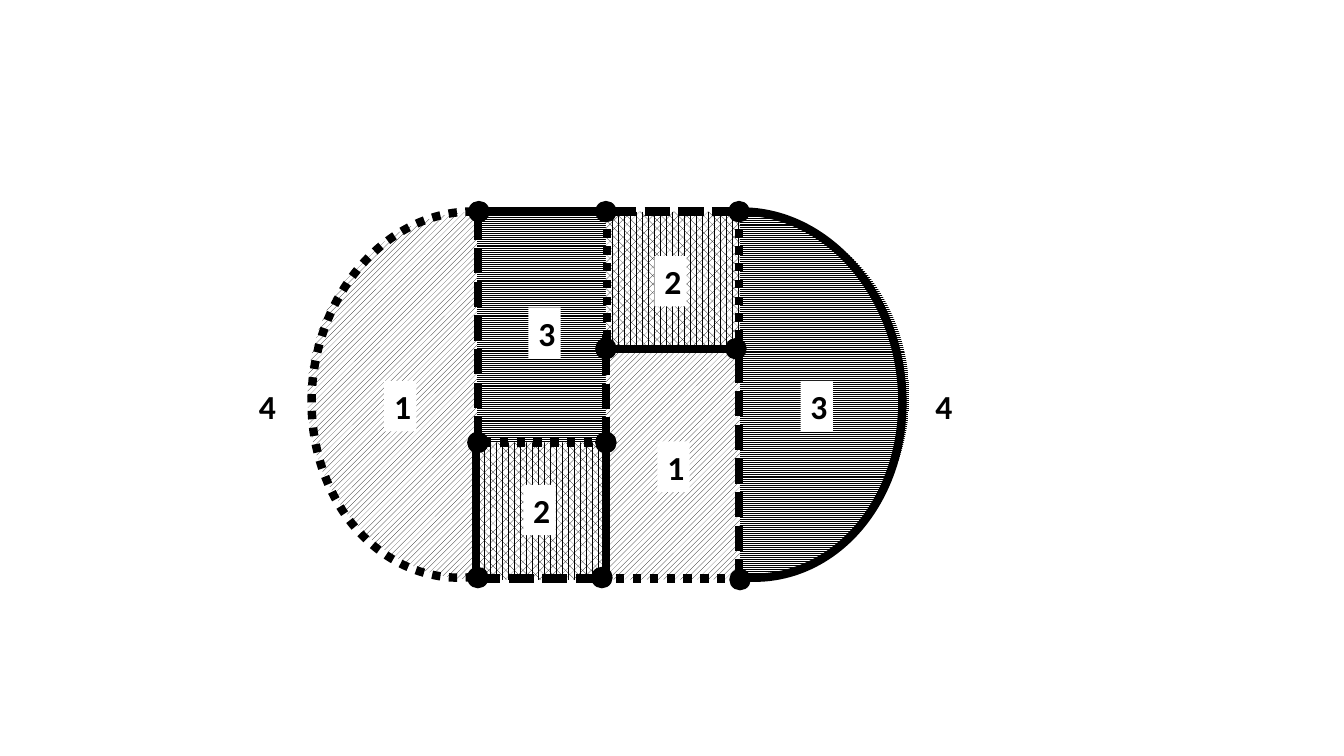
from dataclasses import dataclass
from typing import Optional

from lxml.etree import SubElement
from pptx import Presentation
from pptx.dml.color import RGBColor
from pptx.enum.dml import MSO_LINE as Dash, MSO_PATTERN as Pattern
from pptx.enum.shapes import MSO_CONNECTOR as Connector, MSO_SHAPE as Shape
from pptx.enum.text import MSO_AUTO_SIZE as AutoSize, PP_ALIGN as Align
from pptx.oxml.ns import qn
from pptx.util import Inches, Pt


@dataclass(frozen=True)
class Theme:
    ink: RGBColor = RGBColor(0, 0, 0)
    paper: RGBColor = RGBColor(255, 255, 255)
    font: str = "Calibri"
    label_size: int = 24
    edge_width: int = 6
    vertex_outline: int = 1


@dataclass(frozen=True)
class Region:
    left: float
    top: float
    width: float
    height: float
    pattern: Pattern
    outline: Shape = Shape.RECTANGLE
    angles: tuple = ()


@dataclass(frozen=True)
class Edge:
    start: tuple
    end: tuple
    dash: Optional[Dash] = None


@dataclass(frozen=True)
class Arc:
    left: float
    rotation: float
    dash: Optional[Dash] = None
    flipped: bool = False


@dataclass(frozen=True)
class Label:
    text: str
    left: float
    top: float


THEME = Theme()
DOT, DASH = Dash.ROUND_DOT, Dash.SQUARE_DOT

# Region colours 1 to 3 are shown as hatchings
HATCH_1 = Pattern.WIDE_UPWARD_DIAGONAL
HATCH_2 = Pattern.PERCENT_60
HATCH_3 = Pattern.LIGHT_HORIZONTAL

# Two columns of one short and one tall tile, between two half discs
TOP, COLUMN, SHORT, TALL = 2.1, 1.33, 1.36, 2.29
FIRST, SECOND = 4.68, 6.01
DISC_WIDTH, DISC_HEIGHT = 3.36, 3.65
QUARTER, THREE_QUARTERS = 54, 162  # 90 and 270 degrees
ARC_TOP, ARC_WIDTH, ARC_HEIGHT = 2.39, 3.64, 3.05
ARC_ANGLES = (110.53, 5.56)
VERTEX = 0.2
LABEL_WIDTH, LABEL_HEIGHT = 0.32, 0.5

REGIONS = [
    Region(FIRST, TOP + TALL, COLUMN, SHORT, HATCH_2),
    Region(FIRST, TOP, COLUMN, TALL, HATCH_3),
    Region(SECOND, TOP, COLUMN, SHORT, HATCH_2),
    Region(SECOND, TOP + SHORT, COLUMN, TALL, HATCH_1),
    Region(3.05, TOP, DISC_WIDTH, DISC_HEIGHT, HATCH_1,
           Shape.PIE, (QUARTER, THREE_QUARTERS)),
    Region(5.66, TOP, DISC_WIDTH, DISC_HEIGHT, HATCH_3,
           Shape.PIE, (THREE_QUARTERS, QUARTER)),
]

VERTICES = [
    (4.64, 4.29), (4.65, 2), (5.91, 2), (5.91, 3.36), (5.91, 4.29),
    (7.24, 5.65), (7.2, 3.36), (7.23, 2), (4.64, 5.63), (5.87, 5.63),
]

EDGES = [
    Edge((4.79, 4.39), (6.07, 4.39), DOT),
    Edge((4.79, 2.1), (6.07, 2.1)),
    Edge((6.02, 3.36), (6.02, 2.08), DOT),
    Edge((7.33, 3.36), (7.33, 2.08), DOT),
    Edge((4.74, 4.38), (4.74, 2), DASH),
    Edge((6.01, 4.39), (6.01, 3.31), DASH),
    Edge((6.06, 2.1), (7.34, 2.1), DASH),
    Edge((4.71, 5.74), (5.99, 5.74), DASH),
    Edge((6.01, 3.46), (7.29, 3.46)),
    Edge((7.33, 5.8), (7.33, 3.41), DASH),
    Edge((6.01, 5.74), (6.01, 4.46)),
    Edge((4.72, 5.67), (4.72, 4.39)),
    Edge((6.11, 5.74), (7.39, 5.74), DOT),
]

ARCS = [Arc(5.6, 83.3), Arc(2.8, 96.7, DOT, flipped=True)]

LABELS = [
    Label("1", 3.81, 3.78), Label("1", 6.52, 4.38),
    Label("2", 6.49, 2.54), Label("2", 5.19, 4.81),
    Label("3", 5.24, 3.05), Label("3", 7.94, 3.78),
    Label("4", 2.47, 3.78), Label("4", 9.18, 3.78),
]


def add_outline(shapes, kind: Shape, left: float, top: float,
                width: float, height: float, angles: tuple = ()):
    """Add a preset shape without shadow or line."""
    outline = shapes.add_shape(kind, Inches(left), Inches(top),
                               Inches(width), Inches(height))
    outline.shadow.inherit = False
    outline.line.fill.background()
    for index, angle in enumerate(angles):
        outline.adjustments[index] = angle
    return outline


def set_stroke(line, width: float, dash: Optional[Dash] = None) -> None:
    line.color.rgb = THEME.ink
    line.width = Pt(width)
    if dash is not None:
        line.dash_style = dash


def set_text(frame, text: str, *, size: int, bold: bool, align: Align) -> None:
    frame.word_wrap = False
    frame.auto_size = AutoSize.SHAPE_TO_FIT_TEXT
    paragraph = frame.paragraphs[0]
    paragraph.alignment = align
    run = paragraph.add_run()
    run.text = text
    run.font.name = THEME.font
    run.font.size = Pt(size)
    run.font.bold = bold
    run.font.color.rgb = THEME.ink


def draw_region(shapes, region: Region) -> None:
    area = add_outline(shapes, region.outline, region.left, region.top,
                       region.width, region.height, region.angles)
    area.fill.patterned()
    area.fill.pattern = region.pattern
    area.fill.fore_color.rgb = THEME.ink
    area.fill.back_color.rgb = THEME.paper


def draw_vertex(shapes, left: float, top: float) -> None:
    vertex = add_outline(shapes, Shape.OVAL, left, top, VERTEX, VERTEX)
    vertex.fill.solid()
    vertex.fill.fore_color.rgb = THEME.ink
    set_stroke(vertex.line, THEME.vertex_outline)


def draw_edge(shapes, edge: Edge) -> None:
    ends = [Inches(value) for value in edge.start + edge.end]
    border = shapes.add_connector(Connector.STRAIGHT, *ends)
    set_stroke(border.line, THEME.edge_width, edge.dash)
    SubElement(border._element.spPr, qn("a:effectLst"))


def draw_arc(shapes, arc: Arc) -> None:
    border = add_outline(shapes, Shape.ARC, arc.left, ARC_TOP,
                         ARC_WIDTH, ARC_HEIGHT, ARC_ANGLES)
    border.fill.background()
    border.rotation = arc.rotation
    set_stroke(border.line, THEME.edge_width, arc.dash)
    if arc.flipped:
        border._element.spPr.find(qn("a:xfrm")).set("flipV", "1")


def draw_label(shapes, label: Label) -> None:
    tag = add_outline(shapes, Shape.RECTANGLE, label.left, label.top,
                      LABEL_WIDTH, LABEL_HEIGHT)
    tag.fill.solid()
    tag.fill.fore_color.rgb = THEME.paper
    set_text(tag.text_frame, label.text, size=THEME.label_size,
             bold=True, align=Align.CENTER)


def main() -> None:
    deck = Presentation()
    deck.slide_width, deck.slide_height = Inches(13.33), Inches(7.5)
    slide = deck.slides.add_slide(deck.slide_layouts[6])
    coloured_map = slide.shapes.add_group_shape().shapes

    # Back to front: regions, vertices, borders, numbers
    for region in REGIONS:
        draw_region(coloured_map, region)
    for left, top in VERTICES:
        draw_vertex(coloured_map, left, top)
    for edge in EDGES:
        draw_edge(coloured_map, edge)
    for arc in ARCS:
        draw_arc(coloured_map, arc)
    for label in LABELS:
        draw_label(coloured_map, label)
    deck.save("out.pptx")


if __name__ == "__main__":
    main()
